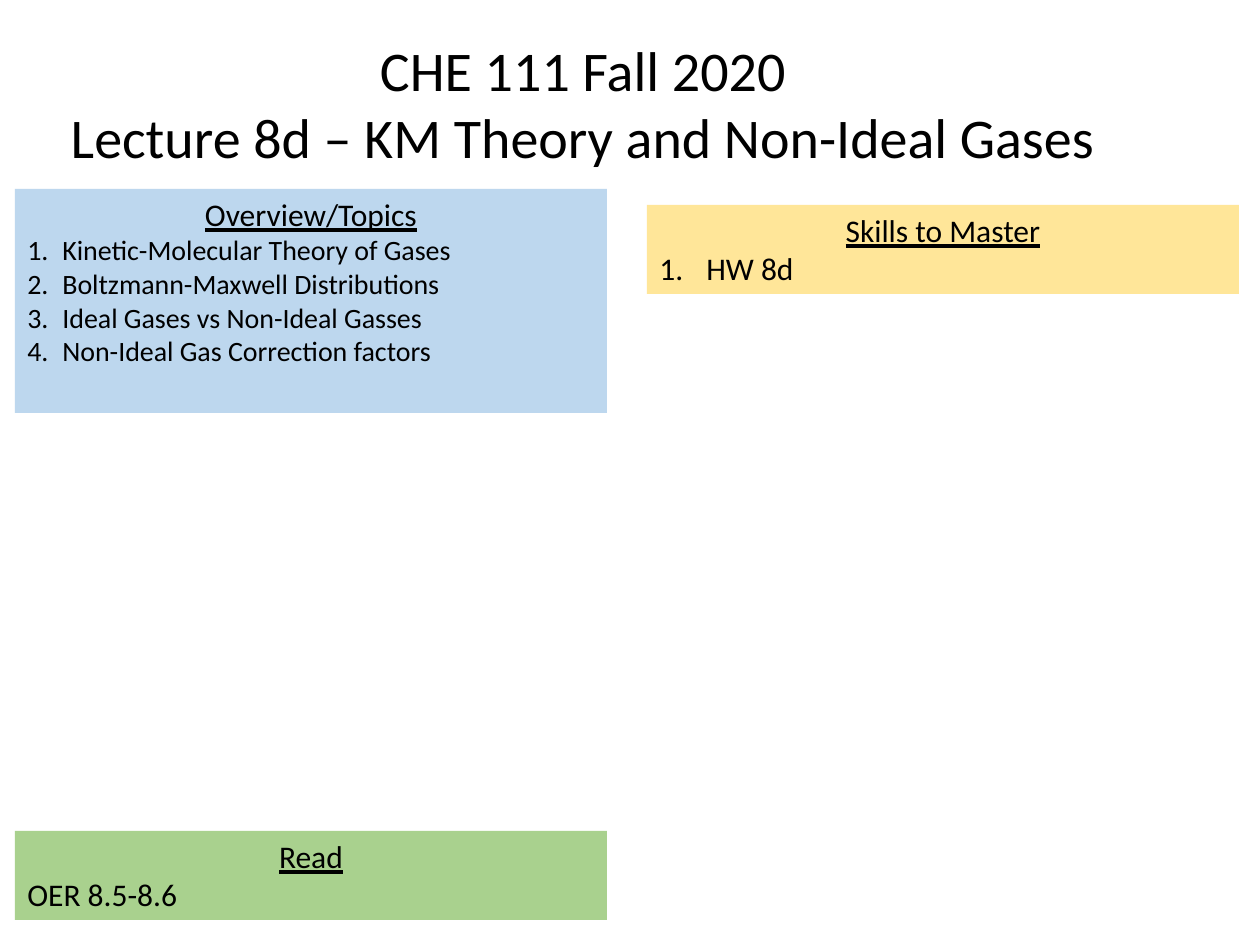
"""Build the lecture 8d overview slide with its topics, skills and reading panels."""
import pptx
import pptx.dml.color
import pptx.enum.shapes
import pptx.enum.text
import pptx.util
from lxml import etree

EMU_PER_PX = 914400 / 126
FONT = "Calibri"
COLORS = {"text": "000000", "topics": "BDD7EE", "skills": "FFE699", "read": "A9D18E"}
ALIGN = pptx.enum.text.PP_ALIGN


def px(length):
    return pptx.util.Emu(round(length * EMU_PER_PX))


def write_paragraph(paragraph, text, size, alignment):
    paragraph.text = text
    paragraph.alignment = alignment
    paragraph.font.name = FONT
    paragraph.font.size = pptx.util.Pt(size)
    paragraph.font.color.rgb = pptx.dml.color.RGBColor.from_string(COLORS["text"])


presentation = pptx.Presentation()
presentation.slide_width = px(1260)
presentation.slide_height = px(945)
slide = presentation.slides.add_slide(presentation.slide_layouts[5])

title = slide.shapes.title
title.left, title.top, title.width, title.height = px(50), px(29), px(1066), px(149)
title_frame = title.text_frame
title_frame.word_wrap = False
title_frame.auto_size = pptx.enum.text.MSO_AUTO_SIZE.NONE
title_frame.vertical_anchor = pptx.enum.text.MSO_ANCHOR.TOP
write_paragraph(title_frame.paragraphs[0], "CHE 111 Fall 2020", 32, ALIGN.CENTER)
write_paragraph(title_frame.add_paragraph(), "Lecture 8d – KM Theory and Non-Ideal Gases", 32, ALIGN.CENTER)

topics = [
    "Kinetic-Molecular Theory of Gases",
    "Boltzmann-Maxwell Distributions",
    "Ideal Gases vs Non-Ideal Gasses",
    "Non-Ideal Gas Correction factors",
]
panels = [
    ("topics", 15, 189, 224, "Overview/Topics", topics, 16, 35),
    ("skills", 647, 205, 89, "Skills to Master", ["HW 8d"], 18, 47),
    ("read", 15, 831, 89, "Read", ["OER 8.5-8.6"], 18, 0),
]
for color, left, top, height, heading, items, item_size, indent in panels:
    panel = slide.shapes.add_shape(
        pptx.enum.shapes.MSO_SHAPE.RECTANGLE, px(left), px(top), px(592), px(height)
    )
    panel.shadow.inherit = False
    panel.fill.solid()
    panel.fill.fore_color.rgb = pptx.dml.color.RGBColor.from_string(COLORS[color])
    panel.line.fill.background()
    frame = panel.text_frame
    frame.word_wrap = True
    frame.vertical_anchor = pptx.enum.text.MSO_ANCHOR.TOP
    write_paragraph(frame.paragraphs[0], heading, 18, ALIGN.CENTER)
    frame.paragraphs[0].font.underline = True
    for item in items:
        paragraph = frame.add_paragraph()
        write_paragraph(paragraph, item, item_size, ALIGN.LEFT)
        if indent:
            properties = paragraph._p.get_or_add_pPr()
            properties.set("marL", str(px(indent)))
            properties.set("indent", str(-px(indent)))
            numbering = etree.Element(pptx.oxml.ns.qn("a:buAutoNum"), type="arabicPeriod")
            properties.insert_element_before(numbering, "a:tabLst", "a:defRPr", "a:extLst")

presentation.save("out.pptx")
